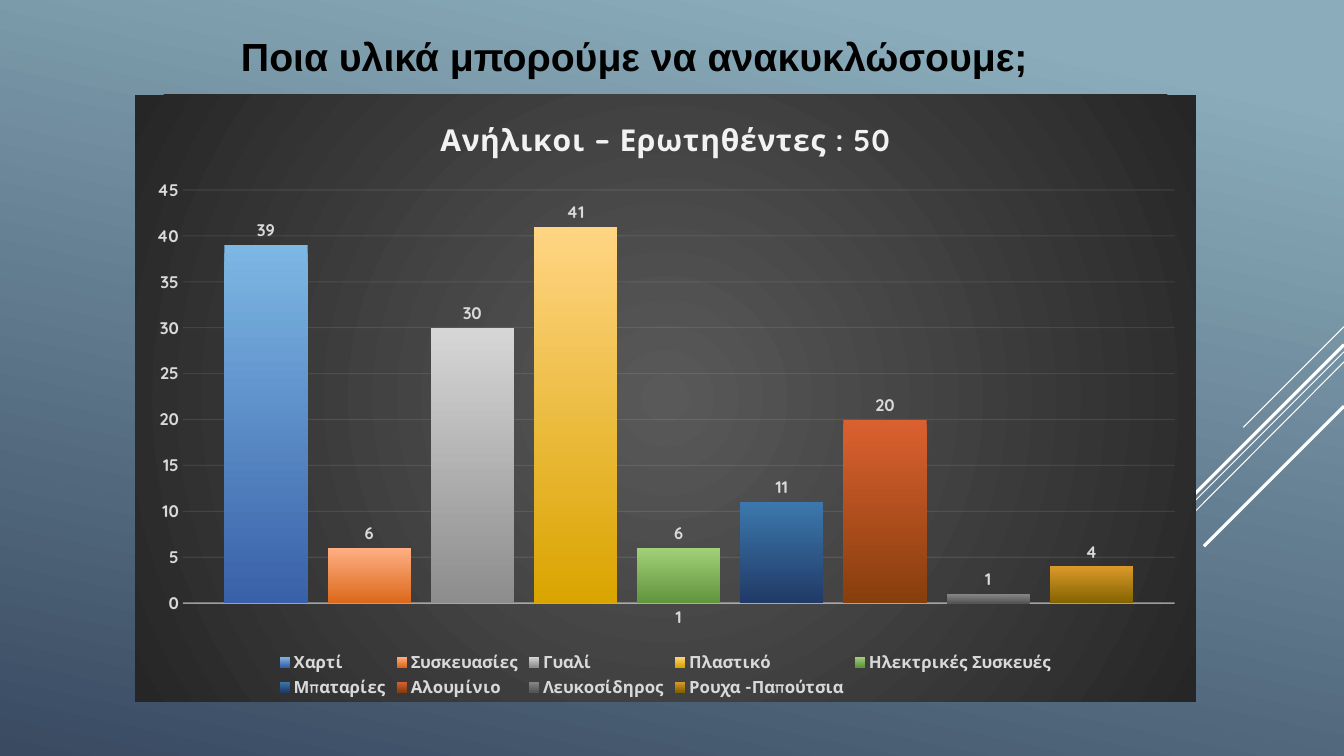
from lxml import etree
from pptx import Presentation
from pptx.chart import data
from pptx.dml import color
from pptx.enum import chart as kinds, shapes, text
from pptx.oxml import parse_xml
from pptx.oxml import ns
from pptx.util import Inches, Pt

FONT = "Quicksand"
GREY = "D9D9D9"
PALE = "F2F2F2"

# Name, values, top and bottom colour; one series has no values
BARS = [
    ("Χαρτί", [39], "7DB7E4", "3961A9"),
    ("Συσκευασίες", [6], "FFAF83", "DB681A"),
    ("Γυαλί", [30], "D6D6D6", "8D8D8D"),
    ("Πλαστικό", [41], "FFD583", "DAA400"),
    ("Ηλεκτρικές Συσκευές", [], "9EDBF2", "3D86C7"),
    ("Ηλεκτρικές Συσκευές", [6], "A2D078", "60943D"),
    ("Μπαταρίες", [11], "3C78AD", "213A67"),
    ("Αλουμίνιο", [20], "DB6030", "873E0C"),
    ("Λευκοσίδηρος", [1], "878787", "555555"),
    ("Ρουχα -Παπούτσια", [4], "DA992A", "836300"),
]

# Start y, end x, end y and width; every line starts at the right edge
LINES = [
    (3.24, 12.33, 4.24, 0.75),
    (3.49, 10.07, 6.75, 0.75),
    (3.59, 11.26, 5.67, 0.75),
    (3.42, 11.42, 5.33, 2.25),
    (4.03, 11.94, 5.42, 2.25),
]


def rgb(code):
    return color.RGBColor.from_string(code)


def style(font, size, code, name=FONT):
    font.size, font.bold, font.name = Pt(size), True, name
    font.color.rgb = rgb(code)


def blend(fill, first, last, angle, start=0):
    """Linear gradient; the angle runs clockwise."""
    fill.gradient()
    fill.gradient_angle = 360 - angle
    for stop, code, place in zip(fill.gradient_stops, (first, last), (start, 1)):
        stop.color.rgb = rgb(code)
        stop.position = place


def stroke(line, code, width, alpha=100):
    line.color.rgb = rgb(code)
    line.width = Pt(width)
    if alpha < 100:
        tint = line.fill._xPr.find(".//" + ns.qn("a:srgbClr"))
        etree.SubElement(tint, ns.qn("a:alpha"), val=str(alpha * 1000))


def add_line(slide, top, left, low, width):
    line = slide.shapes.add_connector(
        shapes.MSO_CONNECTOR.STRAIGHT,
        Inches(13.33), Inches(top), Inches(left), Inches(low))
    stroke(line.line, "FFFFFF", width)
    etree.SubElement(line._element.spPr, ns.qn("a:effectLst"))


def set_title(slide, words):
    title = slide.shapes.title
    title.left, title.top = Inches(2.29), Inches(0.27)
    title.width, title.height = Inches(8.22), Inches(0.57)
    frame = title.text_frame
    frame.text = words
    frame.word_wrap = False
    frame.auto_size = text.MSO_AUTO_SIZE.SHAPE_TO_FIT_TEXT
    frame.vertical_anchor = text.MSO_ANCHOR.TOP
    para = frame.paragraphs[0]
    para.alignment = text.PP_ALIGN.LEFT
    para.line_spacing = 1.0
    style(para.runs[0].font, 28, "000000", "Arial")


def fill_back(chart):
    """Radial gradient behind the whole chart."""
    back = parse_xml(
        f'<c:spPr {ns.nsdecls("c", "a")}><a:gradFill><a:gsLst>'
        '<a:gs pos="0"><a:srgbClr val="595959"/></a:gs>'
        '<a:gs pos="100000"><a:srgbClr val="262626"/></a:gs></a:gsLst>'
        '<a:path path="circle"><a:fillToRect l="50000" t="50000" r="50000" b="50000"/>'
        '</a:path></a:gradFill><a:ln><a:noFill/></a:ln></c:spPr>')
    chart._chartSpace.find(ns.qn("c:txPr")).addprevious(back)


def place_plot(chart):
    area = chart._chartSpace.chart.plotArea
    for old in area.findall(ns.qn("c:layout")):
        area.remove(old)
    area.insert(0, parse_xml(
        f'<c:layout {ns.nsdecls("c")}><c:manualLayout><c:layoutTarget val="inner"/>'
        '<c:xMode val="edge"/><c:yMode val="edge"/><c:x val="0.045"/><c:y val="0.157"/>'
        '<c:w val="0.935"/><c:h val="0.681"/></c:manualLayout></c:layout>'))


def set_axes(chart):
    for axis in (chart.category_axis, chart.value_axis):
        axis.major_tick_mark = axis.minor_tick_mark = kinds.XL_TICK_MARK.NONE
        style(axis.tick_labels.font, 12, GREY)
    stroke(chart.category_axis.format.line, PALE, 1, 54)
    scale = chart.value_axis
    scale.minimum_scale, scale.maximum_scale, scale.major_unit = 0, 45, 5
    scale.format.line.fill.background()
    stroke(scale.major_gridlines.format.line, PALE, 0.75, 10)


def set_bars(plot):
    plot.gap_width, plot.overlap = 100, -24
    plot.vary_by_categories = False
    for bar, (_, values, first, last) in zip(plot.series, BARS):
        blend(bar.format.fill, first, last, 90)
        labels = bar.data_labels
        labels.show_value = True
        labels.position = kinds.XL_LABEL_POSITION.OUTSIDE_END
        style(labels.font, 12, GREY)
        if not values:
            # Without a value range the series takes no room in plot or legend
            bar._element.remove(bar._element.find(ns.qn("c:val")))


def add_chart(slide):
    table = data.CategoryChartData()
    table.categories = ["1"]
    for name, values, *_ in BARS:
        table.add_series(name, values)
    chart = slide.shapes.add_chart(
        kinds.XL_CHART_TYPE.COLUMN_CLUSTERED, Inches(1.34), Inches(0.94),
        Inches(10.52), Inches(6.02), table).chart
    style(chart.font, 10, "FFFFFF")
    fill_back(chart)
    place_plot(chart)
    head = chart.chart_title.text_frame
    head.text = "Ανήλικοι – Ερωτηθέντες : 50"
    run = head.paragraphs[0].runs[0]
    style(run.font, 21.5, PALE)
    run._r.get_or_add_rPr().set("spc", "40")
    chart.has_legend = True
    chart.legend.position = kinds.XL_LEGEND_POSITION.BOTTOM
    chart.legend.include_in_layout = False
    style(chart.legend.font, 12, GREY)
    set_axes(chart)
    set_bars(chart.plots[0])


def main():
    deck = Presentation()
    deck.slide_width, deck.slide_height = Inches(13.33), Inches(7.5)
    slide = deck.slides.add_slide(deck.slide_layouts[5])
    blend(slide.background.fill, "8AACBB", "394A61", 102, 0.1)
    for line in LINES:
        add_line(slide, *line)
    set_title(slide, "Ποια υλικά μπορούμε να ανακυκλώσουμε;")
    add_chart(slide)
    deck.save("out.pptx")


if __name__ == "__main__":
    main()
